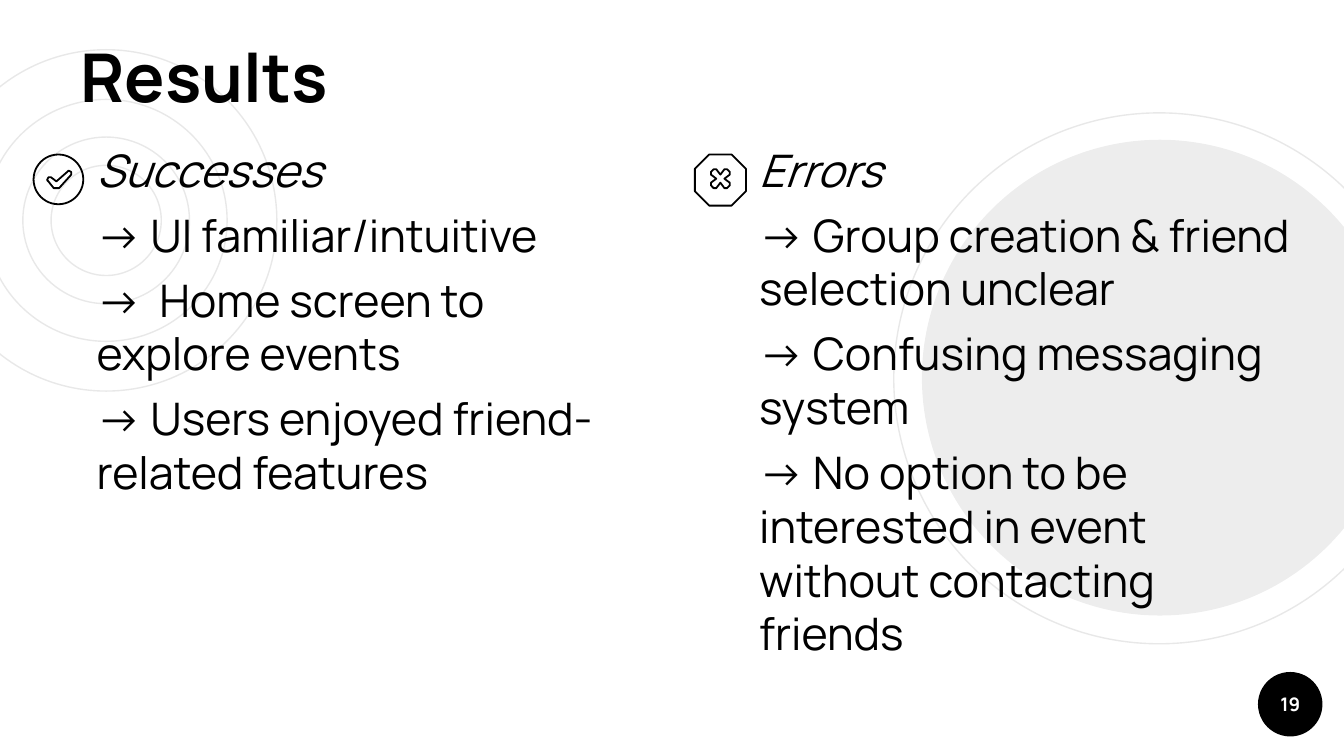
from typing import NamedTuple

from lxml import etree
from pptx import Presentation
from pptx.dml.color import RGBColor
from pptx.enum.shapes import MSO_SHAPE
from pptx.enum.text import MSO_ANCHOR, PP_ALIGN
from pptx.oxml.ns import qn
from pptx.util import Inches, Pt

ELLIPSE, OCTAGON = MSO_SHAPE.OVAL, MSO_SHAPE.OCTAGON
TOP, MIDDLE, BOTTOM = MSO_ANCHOR.TOP, MSO_ANCHOR.MIDDLE, MSO_ANCHOR.BOTTOM
CENTER = PP_ALIGN.CENTER
FONT, BLACK, WHITE, GREY = "Manrope", "000000", "FFFFFF", "E8E8E8"
ICON_LINE = 0.96


class Circle(NamedTuple):
    x: float
    y: float
    size: float


class Column(NamedTuple):
    x: float
    width: float
    heading: str
    points: list[str]


RINGS = [
    Circle(-0.48, 0.37, 2.54),
    Circle(0.17, 1.02, 1.24),
    Circle(-0.11, 0.74, 1.8),
    Circle(0.38, 1.23, 0.82),
    Circle(6.65, 0.84, 3.95),
]
DISC = Circle(6.86, 1.04, 3.54)
BADGE = Circle(9.36, 5, 0.48)
COLUMNS = [
    Column(0.62, 4.01, "Successes", [
        "→ UI familiar/intuitive",
        "→  Home screen to explore events",
        "→ Users enjoyed friend-related features",
    ]),
    Column(5.55, 4.15, "Errors", [
        "→ Group creation & friend selection unclear",
        "→ Confusing messaging system",
        "→ No option to be interested in event without contacting friends",
    ]),
]

# Icon outlines, measured from the icon centre
CHECK = [(-0.02, 0.06), (0, 0.06), (0.09, -0.04), (0.09, -0.06), (0.07, -0.07),
         (0.06, -0.06), (-0.02, 0.01), (-0.06, -0.02), (-0.08, -0.02),
         (-0.09, 0), (-0.08, 0.01), (-0.04, 0.06)]
CROSS_ARM = [(0.03, 0), (0.07, 0.03), (0.07, 0.05), (0.05, 0.07), (0.03, 0.07)]
CROSS = (CROSS_ARM + [(-y, x) for x, y in CROSS_ARM]
         + [(-x, -y) for x, y in CROSS_ARM] + [(y, -x) for x, y in CROSS_ARM])


def color(value: str) -> RGBColor:
    return RGBColor.from_string(value)


def style(sp, fill: str | None = None, line: str | None = None, width: float = 0.75) -> None:
    sp.shadow.inherit = False
    if fill:
        sp.fill.solid()
        sp.fill.fore_color.rgb = color(fill)
    else:
        sp.fill.background()
    if line:
        sp.line.color.rgb = color(line)
        sp.line.width = Pt(width)
    else:
        sp.line.fill.background()


def add_round(slide, c: Circle, kind=ELLIPSE, **look):
    sp = slide.shapes.add_shape(kind, Inches(c.x), Inches(c.y), Inches(c.size), Inches(c.size))
    style(sp, **look)
    return sp


def add_outline(slide, cx: float, cy: float, points: list[tuple[float, float]]) -> None:
    emu = [(Inches(cx + x), Inches(cy + y)) for x, y in points]
    builder = slide.shapes.build_freeform(*emu[0])
    builder.add_line_segments(emu[1:], close=True)
    style(builder.convert_to_shape(), line=BLACK, width=ICON_LINE)


def set_alpha(sp, percent: int) -> None:
    clr = sp.element.spPr.find(qn("a:solidFill"))[0]
    etree.SubElement(clr, qn("a:alpha")).set("val", str(percent * 1000))


def format_runs(p, size: float, rgb: str = BLACK, bold: bool = False, italic: bool = False) -> None:
    for r in p.runs:
        r.font.name, r.font.size = FONT, Pt(size)
        r.font.bold, r.font.italic = bold, italic
        r.font.color.rgb = color(rgb)


def add_text(slide, x: float, y: float, w: float, h: float, text: str, anchor=TOP):
    tf = slide.shapes.add_textbox(Inches(x), Inches(y), Inches(w), Inches(h)).text_frame
    tf.word_wrap = True
    tf.vertical_anchor = anchor
    tf.margin_left = tf.margin_right = tf.margin_top = tf.margin_bottom = Inches(0.1)
    tf.text = text
    return tf


def add_column(slide, col: Column) -> None:
    text = "\n".join([col.heading, *col.points])
    tf = add_text(slide, col.x, 0.96, col.width, 4.05, text)
    for i, p in enumerate(tf.paragraphs):
        p.space_before = Pt(6)
        format_runs(p, 24, italic=i == 0)


# Widescreen 16:9 page
prs = Presentation()
prs.slide_width = Inches(10)
prs.slide_height = prs.slide_width * 9 // 16
slide = prs.slides.add_slide(prs.slide_layouts[6])

# Background rings, badge and disc
for ring in RINGS:
    add_round(slide, ring, line=GREY)
add_round(slide, BADGE, fill=BLACK)
set_alpha(add_round(slide, DISC, fill=BLACK), 7)

# Title
tf = add_text(slide, 0.5, 0.21, 5.71, 0.75, "Results", BOTTOM)
format_runs(tf.paragraphs[0], 36, bold=True)

# Result columns
for col in COLUMNS:
    add_column(slide, col)

# Page number
tf = add_text(slide, BADGE.x, BADGE.y, BADGE.size, BADGE.size, "19", MIDDLE)
tf.paragraphs[0].alignment = CENTER
format_runs(tf.paragraphs[0], 10, WHITE, bold=True)

# Check and cross icons
add_round(slide, Circle(0.25, 1.15, 0.37), line=BLACK, width=ICON_LINE)
add_outline(slide, 0.44, 1.34, CHECK)
octagon = add_round(slide, Circle(5.17, 1.15, 0.38), OCTAGON, line=BLACK, width=ICON_LINE)
octagon.adjustments[0] = 0.28
add_outline(slide, 5.36, 1.33, CROSS)

prs.save("out.pptx")
